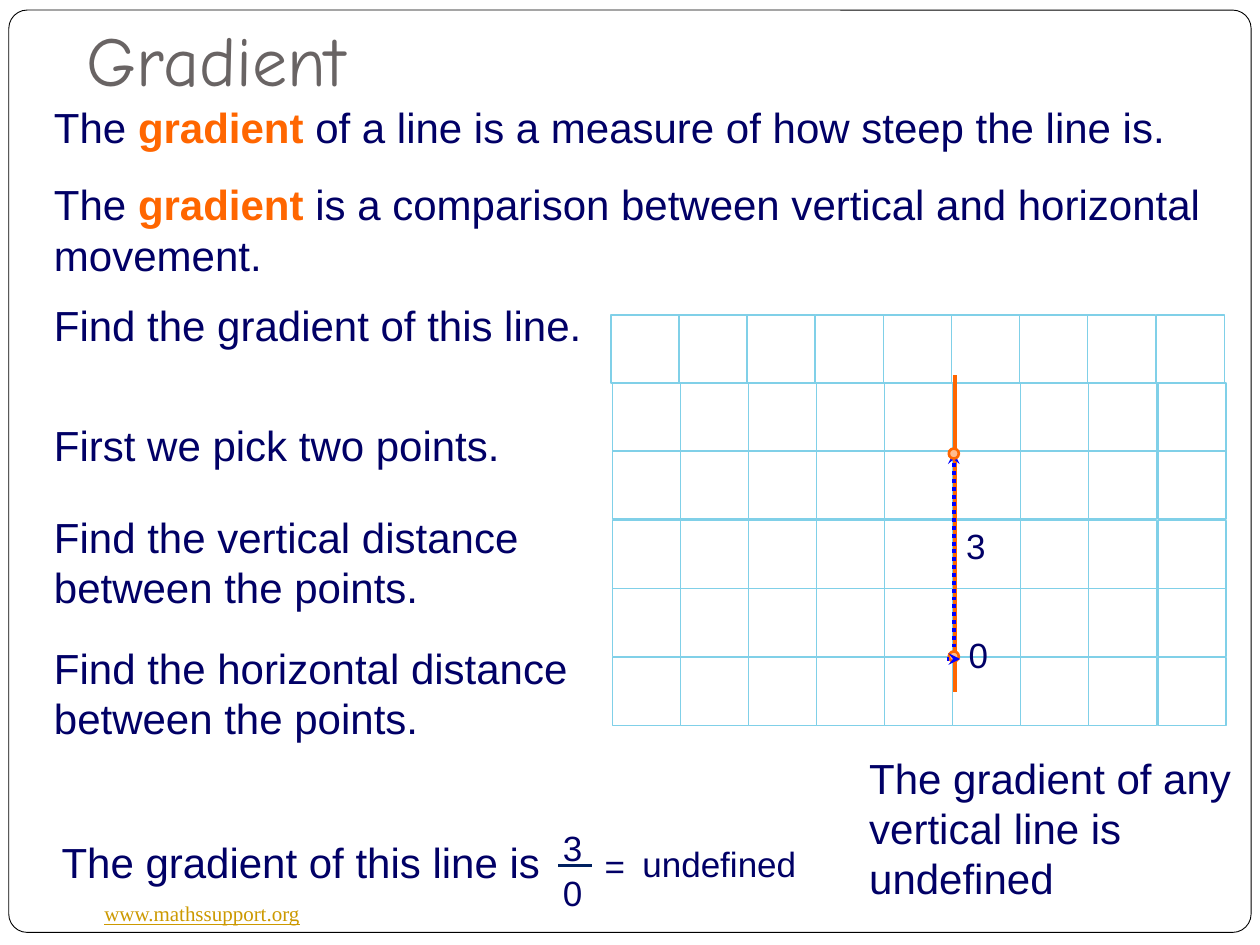
from dataclasses import dataclass
from typing import NamedTuple

from lxml import etree
from pptx import Presentation
from pptx import util as u
from pptx.dml.color import RGBColor
from pptx.enum import dml, shapes, text
from pptx.oxml import ns

PX = 9144  # 100 px to the inch


@dataclass(frozen=True)
class Theme:
    ink: str = "010066"
    accent: str = "FF6600"
    point: str = "FFBC8F"
    arrow: str = "0000FF"
    rule: str = "002060"
    grid: str = "80D0E8"
    title: str = "696464"
    link: str = "CC9900"
    frame: str = "000000"
    paper: str = "FFFFFF"
    body_font: str = "Arial"
    title_font: str = "Comic Neue"
    link_font: str = "Times New Roman"
    title_size: int = 40
    body_size: int = 24
    label_size: int = 20
    link_size: int = 12


THEME = Theme()


class Box(NamedTuple):
    left: int
    top: int
    width: int
    height: int


@dataclass(frozen=True)
class Caption:
    box: Box
    words: str
    size: int = THEME.body_size
    wrap: bool = False


@dataclass(frozen=True)
class Segment:
    start: tuple[int, int]
    end: tuple[int, int]
    color: str
    weight: float
    arrow: str = ""  # "headEnd" marks the start, "tailEnd" the end


LABEL = THEME.label_size
CAPTIONS = [
    Caption(Box(33, 76, 902, 50), "The *gradient* of a line is a measure of how steep the line is."),
    Caption(Box(33, 137, 955, 91),
            "The *gradient* is a comparison between vertical and horizontal movement.", wrap=True),
    Caption(Box(33, 233, 463, 50), "Find the gradient of this line."),
    Caption(Box(33, 328, 387, 50), "First we pick two points."),
    Caption(Box(33, 401, 431, 91), "Find the vertical distance between the points.", wrap=True),
    Caption(Box(33, 505, 431, 91), "Find the horizontal distance between the points.", wrap=True),
    Caption(Box(757, 411, 36, 44), "3", LABEL),
    Caption(Box(759, 498, 36, 44), "0", LABEL),
    Caption(Box(39, 659, 423, 50), "The gradient of this line is"),
    Caption(Box(437, 651, 36, 44), "3", LABEL),
    Caption(Box(437, 687, 36, 44), "0", LABEL),
    Caption(Box(470, 665, 36, 44), "=", LABEL),
    Caption(Box(500, 664, 143, 44), "undefined", LABEL),
    Caption(Box(680, 592, 309, 131), "The gradient of any vertical line is undefined", wrap=True),
]

STEEP_LINE = Segment((758, 549), (758, 298), THEME.accent, 2.25)
RISE = Segment((757, 359), (757, 519), THEME.arrow, 2.25, "headEnd")
RUN = Segment((752, 523), (762, 523), THEME.arrow, 2.25, "tailEnd")
FRACTION_BAR = Segment((443, 687), (470, 687), THEME.rule, 2)
POINTS = [Box(753, 517, 8, 8), Box(753, 356, 8, 8)]

GRID_LEFT, GRID_TOP, CELL = 486, 250, 54
COLUMNS, ROWS = 9, 6
LAST_COLUMN_OFFSET, LAST_ROW_OFFSET = 433, 272


def emu(box: Box) -> list[int]:
    return [side * PX for side in box]


def add_text(page, box: Box, words: str, *, size: int, color: str = THEME.ink,
             font: str = THEME.body_font, wrap: bool = False,
             underline: bool = False, title: bool = False) -> None:
    """Add a text box; words between asterisks are bold and in the accent colour."""
    frame = page.shapes.add_textbox(*emu(box)).text_frame
    frame.word_wrap = wrap
    if title:
        frame.auto_size = text.MSO_AUTO_SIZE.NONE
        frame.vertical_anchor = text.MSO_ANCHOR.BOTTOM
        frame.margin_bottom = 10 * PX
    else:
        frame.auto_size = text.MSO_AUTO_SIZE.SHAPE_TO_FIT_TEXT
    para = frame.paragraphs[0]
    for index, part in enumerate(words.split("*")):
        strong = index % 2 == 1
        span = para.add_run()
        span.text = part
        span.font.name = font
        span.font.size = u.Pt(size)
        span.font.bold = strong
        span.font.underline = underline
        span.font.color.rgb = RGBColor.from_string(THEME.accent if strong else color)


def add_outline(page, kind: shapes.MSO_SHAPE, box: Box, *, fill: str, line: str, weight: float):
    shape = page.shapes.add_shape(kind, *emu(box))
    shape.shadow.inherit = False
    shape.fill.solid()
    shape.fill.fore_color.rgb = RGBColor.from_string(fill)
    shape.line.color.rgb = RGBColor.from_string(line)
    shape.line.width = u.Pt(weight)
    return shape


def add_segment(page, segment: Segment) -> None:
    ends = [value * PX for value in segment.start + segment.end]
    connector = page.shapes.add_connector(shapes.MSO_CONNECTOR.STRAIGHT, *ends)
    connector.line.color.rgb = RGBColor.from_string(segment.color)
    connector.line.width = u.Pt(segment.weight)
    if segment.arrow:
        connector.line.dash_style = dml.MSO_LINE.ROUND_DOT
        stroke = connector.line._get_or_add_ln()
        etree.SubElement(stroke, ns.qn(f"a:{segment.arrow}"), type="stealth")
    etree.SubElement(connector._element.spPr, ns.qn("a:effectLst"))


def add_grid(page) -> None:
    """Draw the squares; the top row sits one px further left."""
    for row in range(ROWS):
        for column in range(COLUMNS):
            left = GRID_LEFT - (row == 0) + LAST_COLUMN_OFFSET * column // (COLUMNS - 1)
            top = GRID_TOP + LAST_ROW_OFFSET * row // (ROWS - 1)
            add_outline(page, shapes.MSO_SHAPE.RECTANGLE, Box(left, top, CELL, CELL),
                        fill=THEME.paper, line=THEME.grid, weight=0.75)


def main() -> None:
    deck = Presentation()
    deck.slide_width, deck.slide_height = 1000 * PX, 750 * PX
    page = deck.slides.add_slide(deck.slide_layouts[6])

    border = add_outline(page, shapes.MSO_SHAPE.ROUNDED_RECTANGLE, Box(7, 8, 986, 732),
                         fill=THEME.paper, line=THEME.frame, weight=0.5)
    border.adjustments[0] = 0.02
    add_text(page, Box(73, 710, 177, 30), "www.mathssupport.org", size=THEME.link_size,
             color=THEME.link, font=THEME.link_font, underline=True)
    add_grid(page)
    add_text(page, Box(59, -3, 900, 93), "Gradient", size=THEME.title_size,
             color=THEME.title, font=THEME.title_font, wrap=True, title=True)

    add_segment(page, STEEP_LINE)
    add_segment(page, RISE)
    for point in POINTS:
        add_outline(page, shapes.MSO_SHAPE.OVAL, point,
                    fill=THEME.point, line=THEME.accent, weight=1.5)
    add_segment(page, RUN)
    add_segment(page, FRACTION_BAR)
    for caption in CAPTIONS:
        add_text(page, caption.box, caption.words, size=caption.size, wrap=caption.wrap)

    deck.save("out.pptx")


if __name__ == "__main__":
    main()
